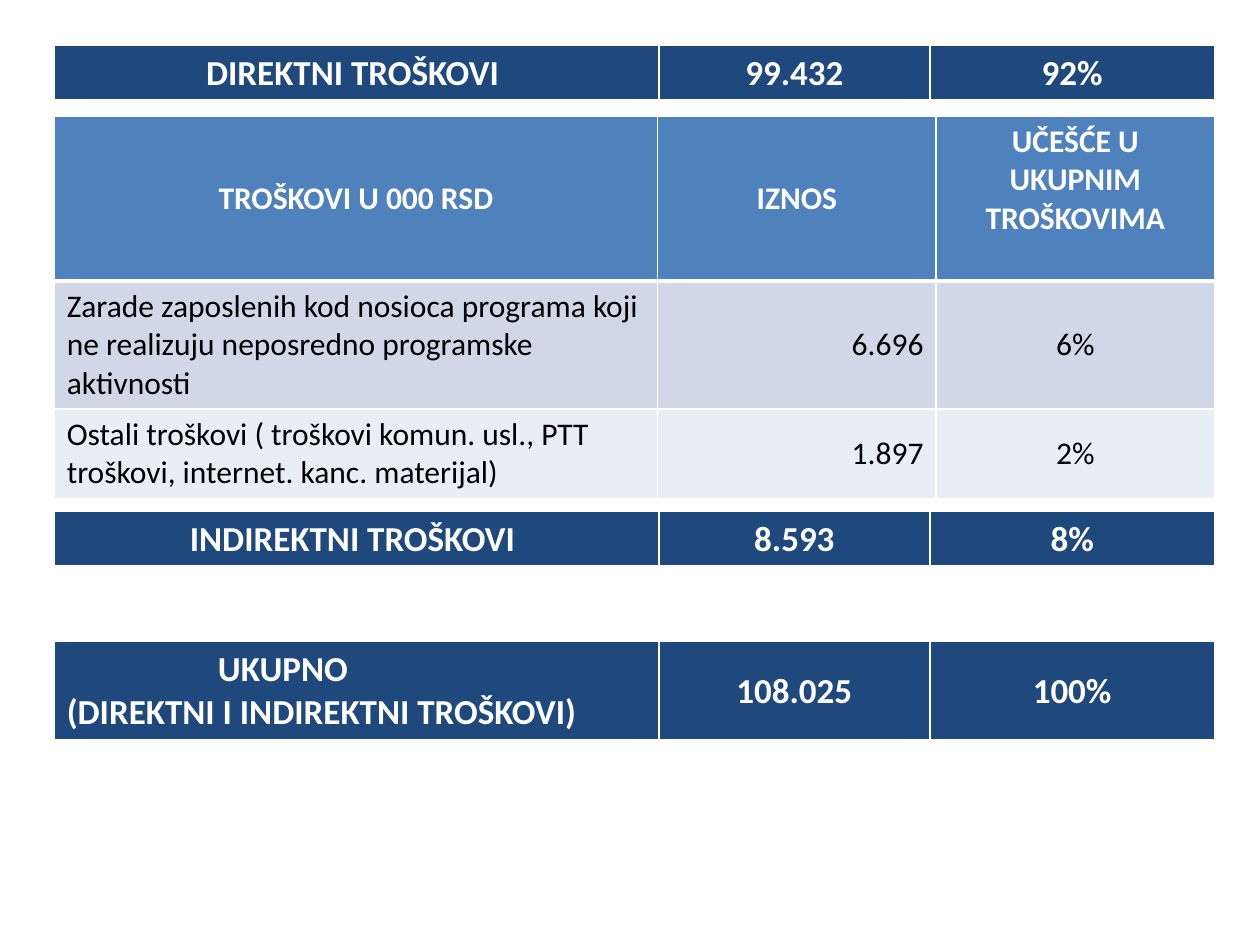
from lxml.etree import SubElement
from pptx import Presentation
from pptx.dml.color import RGBColor
from pptx.enum.text import MSO_ANCHOR as Anchor, PP_ALIGN as Align
from pptx.oxml.ns import qn
from pptx.util import Inches, Pt

WHITE = RGBColor(0xFF, 0xFF, 0xFF)
BLACK = RGBColor(0x00, 0x00, 0x00)
NAVY = RGBColor(0x1F, 0x49, 0x7D)
BLUE = RGBColor(0x4F, 0x81, 0xBD)
BAND_DARK = RGBColor(0xD0, 0xD8, 0xE8)
BAND_LIGHT = RGBColor(0xE9, 0xED, 0xF4)

LEFT, WIDTH = 0.43, 9.21
SUMMARY_COLUMNS = [4.8, 2.15, 2.26]
DETAIL_COLUMNS = [4.79, 2.21, 2.21]


def add_cost_table(slide, top, columns, heights):
    frame = slide.shapes.add_table(len(heights), len(columns), Inches(LEFT), Inches(top),
                                   Inches(WIDTH), Inches(sum(heights)))
    table = frame.table
    table.first_row = table.horz_banding = False
    for column, width in zip(table.columns, columns):
        column.width = Inches(width)
    for row, height in zip(table.rows, heights):
        row.height = Inches(height)
    return table


def fill_cell(cell, text, fill, size, color, bold, align, anchor, borders):
    """Write and format one cell; borders maps each side (L, R, T, B) to points."""
    properties = cell._tc.get_or_add_tcPr()
    for side, points in borders.items():
        line = SubElement(properties, qn(f"a:ln{side}"), w=str(Pt(points)))
        SubElement(SubElement(line, qn("a:solidFill")), qn("a:srgbClr"), val=str(WHITE))
    cell.fill.solid()
    cell.fill.fore_color.rgb = fill
    cell.vertical_anchor = anchor
    cell.text = text
    for para in cell.text_frame.paragraphs:
        para.alignment = align
        for span in para.runs:
            for name, value in {"name": "Calibri", "size": Pt(size), "bold": bold}.items():
                setattr(span.font, name, value)
            span.font.color.rgb = color


deck = Presentation()
deck.slide_width, deck.slide_height = Inches(10), Inches(7.5)
page = deck.slides.add_slide(deck.slide_layouts[6])

# Cost details: a header row above two banded rows
detail_rows = [
    ("TROŠKOVI U 000 RSD", "IZNOS", "UČEŠĆE U UKUPNIM TROŠKOVIMA"),
    ("Zarade zaposlenih kod nosioca programa koji ne realizuju neposredno "
     "programske aktivnosti", "6.696", "6%"),
    ("Ostali troškovi ( troškovi komun. usl., PTT troškovi, internet. kanc. materijal)",
     "1.897", "2%"),
]
row_fills = [BLUE, BAND_DARK, BAND_LIGHT]
details = add_cost_table(page, 0.92, DETAIL_COLUMNS, [1.31, 1, 0.69])
for row, (texts, fill) in enumerate(zip(detail_rows, row_fills)):
    header = row == 0
    aligns = [Align.CENTER] * 3 if header else [Align.LEFT, Align.RIGHT, Align.CENTER]
    anchors = [Anchor.MIDDLE, Anchor.MIDDLE, Anchor.TOP if header else Anchor.MIDDLE]
    borders = {"L": 1, "R": 1, "T": 3 if row == 1 else 1, "B": 3 if header else 1}
    for column, text in enumerate(texts):
        fill_cell(details.cell(row, column), text, fill, 18, WHITE if header else BLACK,
                  header, aligns[column], anchors[column], borders)

# Summary bars
summaries = [
    (5.09, 0.79, ("UKUPNO\n(DIREKTNI I INDIREKTNI TROŠKOVI)", "108.025", "100%")),
    (4.06, 0.43, ("INDIREKTNI TROŠKOVI ", "8.593", "8%")),
    (0.36, 0.43, ("DIREKTNI TROŠKOVI ", "99.432", "92%")),
]
for top, height, texts in summaries:
    bar = add_cost_table(page, top, SUMMARY_COLUMNS, [height])
    for column, text in enumerate(texts):
        two_lines = "\n" in text
        cell = bar.cell(0, column)
        fill_cell(cell, text, NAVY, 20, WHITE, True,
                  Align.LEFT if two_lines else Align.CENTER, Anchor.MIDDLE,
                  {"L": 1, "R": 1, "T": 1, "B": 3})
        if two_lines:
            first_line = cell.text_frame.paragraphs[0]
            first_line._p.get_or_add_pPr().set("marL", str(Inches(1.2)))

deck.save("out.pptx")
